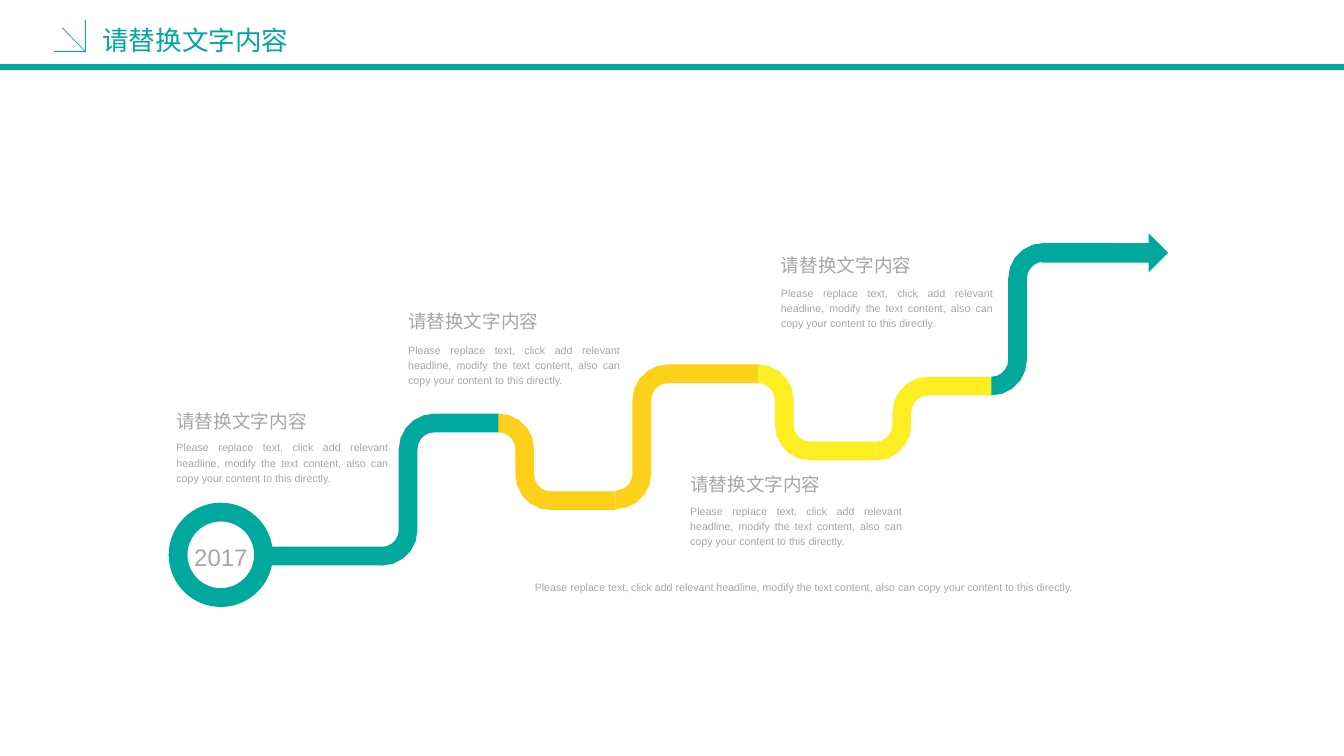
"""Build a winding timeline slide with a title, four milestones and a closing note."""
from dataclasses import dataclass
from math import cos, pi, sin

from lxml.etree import SubElement
from pptx import Presentation
from pptx.dml.color import RGBColor
from pptx.enum.shapes import MSO_CONNECTOR, MSO_SHAPE
from pptx.enum.text import MSO_ANCHOR, MSO_AUTO_SIZE, PP_ALIGN
from pptx.oxml.ns import qn
from pptx.util import Emu, Inches, Pt

CELL = Inches(0.1)
COLS, ROWS = 140.6, 79.1
RADIUS = 2.75
HALF_BAND = 0.98
ARC_STEPS = 5
FONT = "Arial"
COLORS = {"teal": "01A89E", "amber": "FDD01A", "yellow": "FDEE21", "grey": "A6A6A6"}
HEADING = "请替换文字内容"
BODY = ("Please replace text, click add relevant headline, modify the text content, "
        "also can copy your content to this directly.")


@dataclass(frozen=True)
class Bend:
    """A band that turns from one level to the next, then runs flat."""
    x: float
    y_start: float
    y_end: float
    x_end: float
    color: str


@dataclass(frozen=True)
class Milestone:
    """A heading with its paragraph below."""
    x: float
    heading_y: float
    heading_width: float
    body_y: float


@dataclass(frozen=True)
class Rule:
    """A straight line of the page header."""
    x1: float
    y1: float
    x2: float
    y2: float
    weight: float


BENDS = [
    Bend(64.4, 52.3, 39.1, 79.4, "amber"),
    Bend(91.6, 47.2, 40.4, 103.8, "yellow"),
    Bend(79.3, 39.1, 47.2, 91.6, "yellow"),
    Bend(39.95, 58.2, 44.25, 52.2, "teal"),
    Bend(52.15, 44.25, 52.4, 64.4, "amber"),
    Bend(103.7, 40.4, 26.4, 115.9, "teal"),
]
MILESTONES = [
    Milestone(42.7, 32, 18.3, 35.7),
    Milestone(72.2, 49, 19.1, 52.55),
    Milestone(81.7, 26.1, 19.7, 29.7),
    Milestone(18.45, 42.4, 17.5, 45.9),
]
BASELINE = Rule(0, 7, COLS, 7, 4.5)
CORNER = [
    Rule(5.7, 5.4, 8.95, 5.4, 0.5),
    Rule(8.95, 5.4, 8.95, 2.05, 0.5),
    Rule(8.95, 5.4, 6.5, 2.9, 0.5),
]


def grid(*cells: float) -> list[Emu]:
    """Convert grid cells to lengths."""
    return [Emu(round(n * CELL)) for n in cells]


def rgb(name: str) -> RGBColor:
    """Look up a named colour."""
    return RGBColor.from_string(COLORS[name])


def paint(sp, color: str) -> None:
    """Give a shape a plain fill without outline or shadow."""
    sp.shadow.inherit = False
    sp.fill.solid()
    sp.fill.fore_color.rgb = rgb(color)
    sp.line.fill.background()


def add_shape(shapes, kind: MSO_SHAPE, box: tuple, color: str):
    """Draw a preset shape on the grid."""
    sp = shapes.add_shape(kind, *grid(*box))
    paint(sp, color)
    return sp


def add_rule(shapes, rule: Rule) -> None:
    """Draw a header line."""
    line = shapes.add_connector(MSO_CONNECTOR.STRAIGHT,
                                *grid(rule.x1, rule.y1, rule.x2, rule.y2))
    line.line.color.rgb = rgb("teal")
    line.line.width = Pt(rule.weight)
    SubElement(line._element.spPr, qn("a:effectLst"))


def bend_edge(bend: Bend, offset: float) -> list[tuple[float, float]]:
    """Trace one edge of a bend at an offset from its centre line."""
    way = 1 if bend.y_end > bend.y_start else -1
    angles = [pi / 2 * i / ARC_STEPS for i in range(ARC_STEPS + 1)]
    first, second = RADIUS + offset, RADIUS - offset
    leave = [(bend.x + first * sin(a),
              bend.y_start + way * (RADIUS - first * cos(a))) for a in angles]
    arrive = [(bend.x + 2 * RADIUS - second * cos(a),
               bend.y_end - way * (RADIUS - second * sin(a))) for a in angles]
    return leave + arrive + [(bend.x_end, bend.y_end - way * offset)]


def add_bend(shapes, bend: Bend) -> None:
    """Draw a bend as one closed outline."""
    outline = bend_edge(bend, HALF_BAND) + bend_edge(bend, -HALF_BAND)[::-1]
    points = [tuple(grid(*point)) for point in outline]
    builder = shapes.build_freeform(*points[0])
    builder.add_line_segments(points[1:], close=True)
    paint(builder.convert_to_shape(), bend.color)


def style_text(tf, text: str, size: float, color: str, align: PP_ALIGN) -> None:
    """Write one formatted paragraph."""
    tf.word_wrap = True
    p = tf.paragraphs[0]
    p.text = text
    p.alignment = align
    p.line_spacing = 1.2
    p.font.name = FONT
    p.font.size = Pt(size)
    p.font.color.rgb = rgb(color)


def add_text(shapes, box: tuple, text: str, size: float,
             align: PP_ALIGN = PP_ALIGN.LEFT,
             anchor: MSO_ANCHOR = MSO_ANCHOR.TOP) -> None:
    """Add a grey text box without margins."""
    tf = shapes.add_textbox(*grid(*box)).text_frame
    style_text(tf, text, size, "grey", align)
    tf.margin_left = tf.margin_right = tf.margin_top = tf.margin_bottom = 0
    tf.vertical_anchor = anchor
    tf.auto_size = MSO_AUTO_SIZE.SHAPE_TO_FIT_TEXT


def add_milestone(shapes, stone: Milestone) -> None:
    """Add a heading and its paragraph as a group."""
    group = shapes.add_group_shape().shapes
    add_text(group, (stone.x, stone.heading_y, stone.heading_width, 2.8), HEADING, 14)
    add_text(group, (stone.x, stone.body_y, 22.2, 4.8), BODY, 8,
             PP_ALIGN.JUSTIFY, MSO_ANCHOR.MIDDLE)


def set_title(title) -> None:
    """Place and format the title placeholder."""
    title.left, title.top, title.width, title.height = grid(9.7, 1.5, 23.6, 4.7)
    tf = title.text_frame
    style_text(tf, HEADING, 20, "teal", PP_ALIGN.LEFT)
    tf.vertical_anchor = MSO_ANCHOR.MIDDLE
    tf.auto_size = MSO_AUTO_SIZE.NONE


def main() -> None:
    """Assemble and save the slide."""
    prs = Presentation()
    prs.slide_width, prs.slide_height = grid(COLS, ROWS)
    s = prs.slides.add_slide(prs.slide_layouts.get_by_name("Title Only"))
    set_title(s.shapes.title)
    add_rule(s.shapes, BASELINE)
    corner = s.shapes.add_group_shape().shapes
    for rule in CORNER:
        add_rule(corner, rule)
    for bend in BENDS:
        add_bend(s.shapes, bend)
    ring = add_shape(s.shapes, MSO_SHAPE.DONUT, (17.65, 52.6, 10.9, 10.9), "teal")
    ring.adjustments[0] = 0.18
    add_text(s.shapes, (18.55, 56.15, 9.1, 3.6), "2017", 18, PP_ALIGN.CENTER)
    add_shape(s.shapes, MSO_SHAPE.RECTANGLE, (28.4, 57.2, 11.6, 1.95), "teal")
    add_shape(s.shapes, MSO_SHAPE.RIGHT_ARROW, (109, 24.4, 13.2, 4.1), "teal")
    add_text(s.shapes, (55.95, 60.55, 67.6, 1.5), BODY, 8, PP_ALIGN.JUSTIFY)
    for stone in MILESTONES:
        add_milestone(s.shapes, stone)
    prs.save("out.pptx")


if __name__ == "__main__":
    main()
